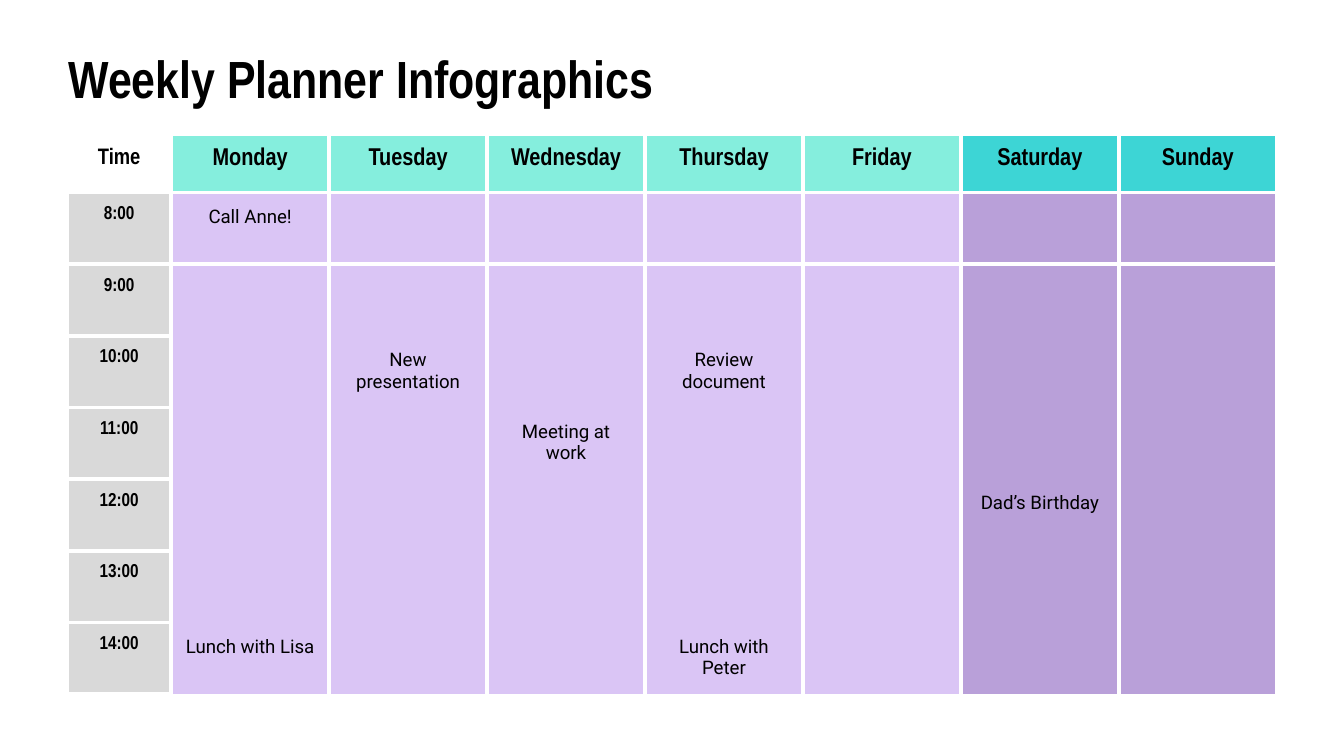
from dataclasses import dataclass

from lxml import etree
from pptx import Presentation
from pptx.dml.color import RGBColor
from pptx.enum import text
from pptx.oxml import ns
from pptx.util import Pt


@dataclass(frozen=True)
class Theme:
    heading_font: str = "Arial Narrow"
    body_font: str = "Roboto"
    ink: str = "000000"
    line: str = "FFFFFF"
    hour: str = "D9D9D9"
    weekday_head: str = "85EEDD"
    weekend_head: str = "3DD5D5"
    weekday: str = "DAC5F5"
    weekend: str = "B9A0D9"
    title_size: float = 28
    time_size: float = 12
    day_size: float = 13
    body_size: float = 10
    border: float = 2.25


theme = Theme()
NO_STYLE = "{2D5ABB26-0587-4C30-8999-92F81FD0307C}"
MARGIN = Pt(7.2)


def write(frame, words, font, size, bold, align):
    para = frame.paragraphs[0]
    para.text = words
    para.alignment = align
    para.font.name = font
    para.font.size = Pt(size)
    para.font.bold = bold
    para.font.color.rgb = RGBColor.from_string(theme.ink)


def add_borders(cell, sides):
    properties = cell._tc.get_or_add_tcPr()
    for side in sides:
        line = etree.SubElement(properties, ns.qn(f"a:ln{side}"), w=str(Pt(theme.border)))
        fill = etree.SubElement(line, ns.qn("a:solidFill"))
        etree.SubElement(fill, ns.qn("a:srgbClr"), val=theme.line)


deck = Presentation()
deck.slide_width, deck.slide_height = Pt(720), Pt(405)
page = deck.slides.add_slide(deck.slide_layouts[5])

title = page.shapes.title
title.left, title.top, title.width, title.height = Pt(29.5), Pt(17.3), Pt(386), Pt(49)
frame = title.text_frame
frame.auto_size = text.MSO_AUTO_SIZE.NONE
frame.vertical_anchor = text.MSO_ANCHOR.MIDDLE
frame.margin_left = frame.margin_right = frame.margin_top = frame.margin_bottom = MARGIN
write(frame, "Weekly Planner Infographics", theme.heading_font, theme.title_size, True,
      text.PP_ALIGN.LEFT)

headers = ["Time", "Monday", "Tuesday", "Wednesday", "Thursday", "Friday", "Saturday", "Sunday"]
hours = [f"{hour}:00" for hour in range(8, 15)]
events = {
    ("Monday", "8:00"): "Call Anne!",
    ("Tuesday", "10:00"): "New presentation",
    ("Thursday", "10:00"): "Review document",
    ("Wednesday", "11:00"): "Meeting at work",
    ("Saturday", "12:00"): "Dad’s Birthday",
    ("Monday", "14:00"): "Lunch with Lisa",
    ("Thursday", "14:00"): "Lunch with Peter",
}
time_width, day_width = 55.7, 84.64
head_height, hour_height = 31.2, 38.4

planner = page.shapes.add_table(
    len(hours) + 1, len(headers), Pt(36), Pt(72),
    Pt(time_width + 7 * day_width), Pt(head_height + 7 * hour_height)).table
planner.first_row = planner.horz_banding = False
planner._tbl.tblPr.find(ns.qn("a:tableStyleId")).text = NO_STYLE
for number, column in enumerate(planner.columns):
    column.width = Pt(day_width if number else time_width)
for number, row in enumerate(planner.rows):
    row.height = Pt(hour_height if number else head_height)

for row, hour in enumerate([None] + hours):
    for column, header in enumerate(headers):
        cell = planner.cell(row, column)
        cell.margin_left = cell.margin_right = cell.margin_top = cell.margin_bottom = MARGIN
        weekend = column > 5
        font, size, bold = theme.heading_font, theme.body_size, True
        if row == 0 and column == 0:
            words, size, color, sides = header, theme.time_size, None, "RB"
        elif row == 0:
            words, size, sides = header, theme.day_size, "LRTB"
            color = theme.weekend_head if weekend else theme.weekday_head
        elif column == 0:
            words, color, sides = hour, theme.hour, "LRTB"
        else:
            words, font, bold = events.get((header, hour), ""), theme.body_font, False
            color = theme.weekend if weekend else theme.weekday
            sides = "LRT" if row == 1 else "LR"
        add_borders(cell, sides)
        if color:
            cell.fill.solid()
            cell.fill.fore_color.rgb = RGBColor.from_string(color)
        else:
            cell.fill.background()
        write(cell.text_frame, words, font, size, bold, text.PP_ALIGN.CENTER)

deck.save("out.pptx")
